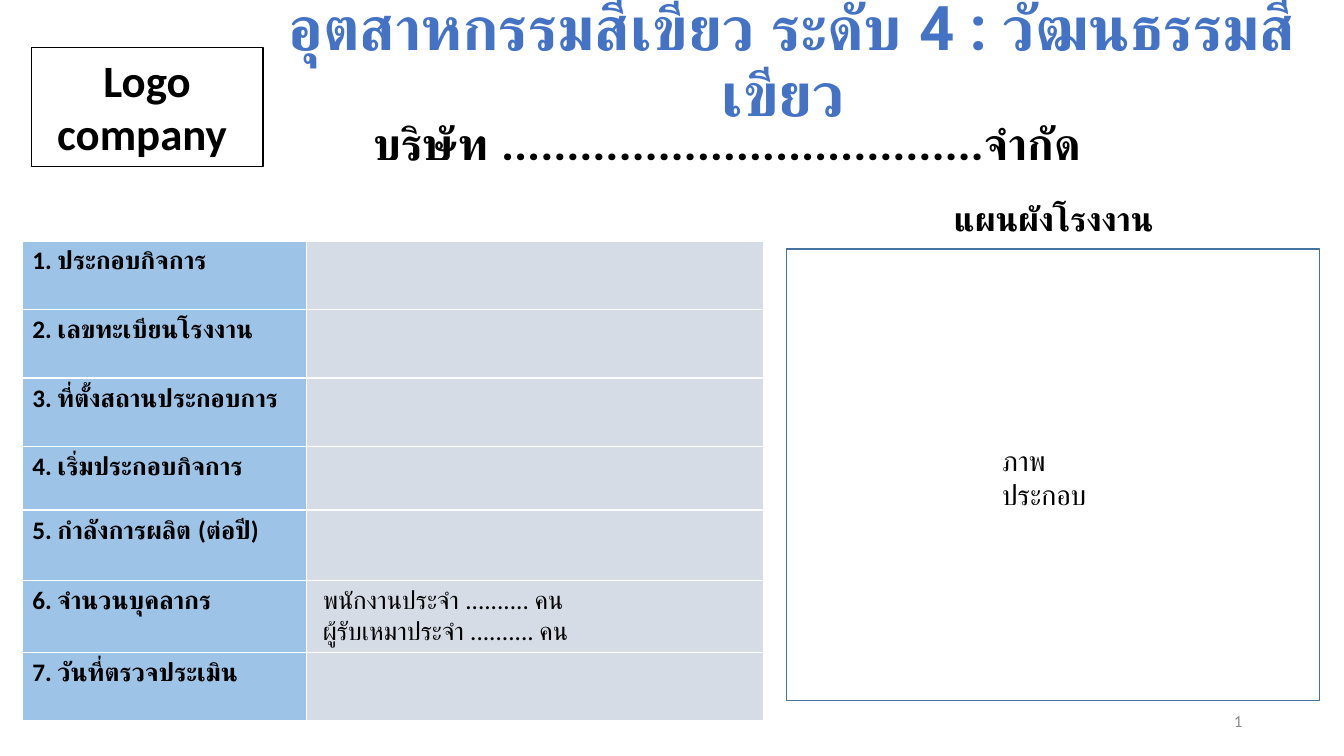
import pptx
import pptx.dml.color
import pptx.enum.shapes
import pptx.enum.text
import pptx.oxml
import pptx.oxml.ns
import pptx.util
from lxml import etree

Inches, Pt = pptx.util.Inches, pptx.util.Pt
ANCHOR = pptx.enum.text.MSO_ANCHOR
ALIGN = pptx.enum.text.PP_ALIGN
RECT = pptx.enum.shapes.MSO_SHAPE.RECTANGLE
qn = pptx.oxml.ns.qn


def rgb(value):
    return pptx.dml.color.RGBColor.from_string(value)


def write(tf, text, size, font="Calibri", color="000000", bold=True,
          align=ALIGN.LEFT, spacing=1.0):
    """Fill a text frame, one paragraph per line of text."""
    tf.text = text
    for p in tf.paragraphs:
        p.alignment, p.line_spacing = align, spacing
        for r in p.runs:
            for key, value in {"size": Pt(size), "name": font, "bold": bold}.items():
                setattr(r.font, key, value)
            r.font.color.rgb = rgb(color)


prs = pptx.Presentation()
prs.slide_width, prs.slide_height = Inches(13.33), Inches(7.5)
s = prs.slides.add_slide(prs.slide_layouts[5])

# Boxes: place, fill, line, text format
boxes = [
    ((3.37, 1.1, 7.68, 0.64), "FFFFFF", None,
     {"text": "บริษัท .....................................จำกัด", "size": 32, "font": "Roboto"}),
    ((0.31, 0.47, 2.3, 1.18), "FFFFFF", "000000",
     {"text": "Logo company ", "size": 32}),
    ((7.8, 2.47, 5.29, 4.48), None, "43739E", None),
]
for place, fill, line, label in boxes:
    sp = s.shapes.add_shape(RECT, *map(Inches, place))
    sp.shadow.inherit = False
    if fill:
        sp.fill.solid()
        sp.fill.fore_color.rgb = rgb(fill)
    else:
        sp.fill.background()
    if line:
        sp.line.color.rgb, sp.line.width = rgb(line), Pt(1)
    else:
        sp.line.fill.background()
    if label:
        sp.text_frame.word_wrap = True
        sp.text_frame.vertical_anchor = ANCHOR.TOP
        write(sp.text_frame, align=ALIGN.CENTER, **label)

# Company facts
facts = [
    ("1. ประกอบกิจการ", ""),
    ("2. เลขทะเบียนโรงงาน", ""),
    ("3. ที่ตั้งสถานประกอบการ", ""),
    ("4. เริ่มประกอบกิจการ", ""),
    ("5. กำลังการผลิต (ต่อปี)", ""),
    ("6. จำนวนบุคลากร", " พนักงานประจำ .......... คน\n ผู้รับเหมาประจำ .......... คน"),
    ("7. วันที่ตรวจประเมิน", ""),
]
heights = [0.68, 0.68, 0.68, 0.63, 0.7, 0.7, 0.68]
frame = s.shapes.add_table(len(facts), 2, Inches(0.22), Inches(2.39),
                           Inches(7.35), Inches(sum(heights)))
table = frame.table
for column, width in zip(table.columns, (2.82, 4.53)):
    column.width = Inches(width)
for row, height, texts in zip(table.rows, heights, facts):
    row.height = Inches(height)
    for cell, text, fill, bold in zip(row.cells, texts, ("9DC3E6", "D6DCE5"), (True, False)):
        write(cell.text_frame, text, 18, bold=bold)
        tc_pr = cell._tc.get_or_add_tcPr()
        for side in ("a:lnL", "a:lnR", "a:lnT", "a:lnB"):
            ln = etree.SubElement(tc_pr, qn(side), w=str(Pt(1)))
            solid = etree.SubElement(ln, qn("a:solidFill"))
            etree.SubElement(solid, qn("a:srgbClr"), val="FFFFFF")
        cell.fill.solid()
        cell.fill.fore_color.rgb = rgb(fill)

# Captions and page number
captions = [
    ((9.42, 6.95, 3, 0.4), ANCHOR.MIDDLE,
     {"text": "1", "size": 12, "color": "8C8C8C", "bold": False, "align": ALIGN.RIGHT}),
    ((8.91, 1.76, 3.08, 0.86), ANCHOR.MIDDLE,
     {"text": "แผนผังโรงงาน", "size": 24, "align": ALIGN.CENTER, "spacing": 0.9}),
    ((9.84, 4.35, 1.21, 0.44), ANCHOR.TOP,
     {"text": "ภาพประกอบ", "size": 20, "bold": False}),
]
for place, anchor, label in captions:
    tf = s.shapes.add_textbox(*map(Inches, place)).text_frame
    tf.word_wrap, tf.vertical_anchor = True, anchor
    write(tf, **label)

# Title, in front of the company name box
title = s.shapes.title
for key, value in {"left": 2.61, "top": 0.2, "width": 10.49, "height": 0.86}.items():
    setattr(title, key, Inches(value))
tf = title.text_frame
tf.word_wrap, tf.vertical_anchor = True, ANCHOR.MIDDLE
tf.auto_size = pptx.enum.text.MSO_AUTO_SIZE.NONE
write(tf, "อุตสาหกรรมสีเขียว ระดับ 4 : วัฒนธรรมสีเขียว ", 44, "Roboto", "4472C4",
      align=ALIGN.CENTER, spacing=0.9)
title.element.getparent().append(title.element)

prs.save("out.pptx")
